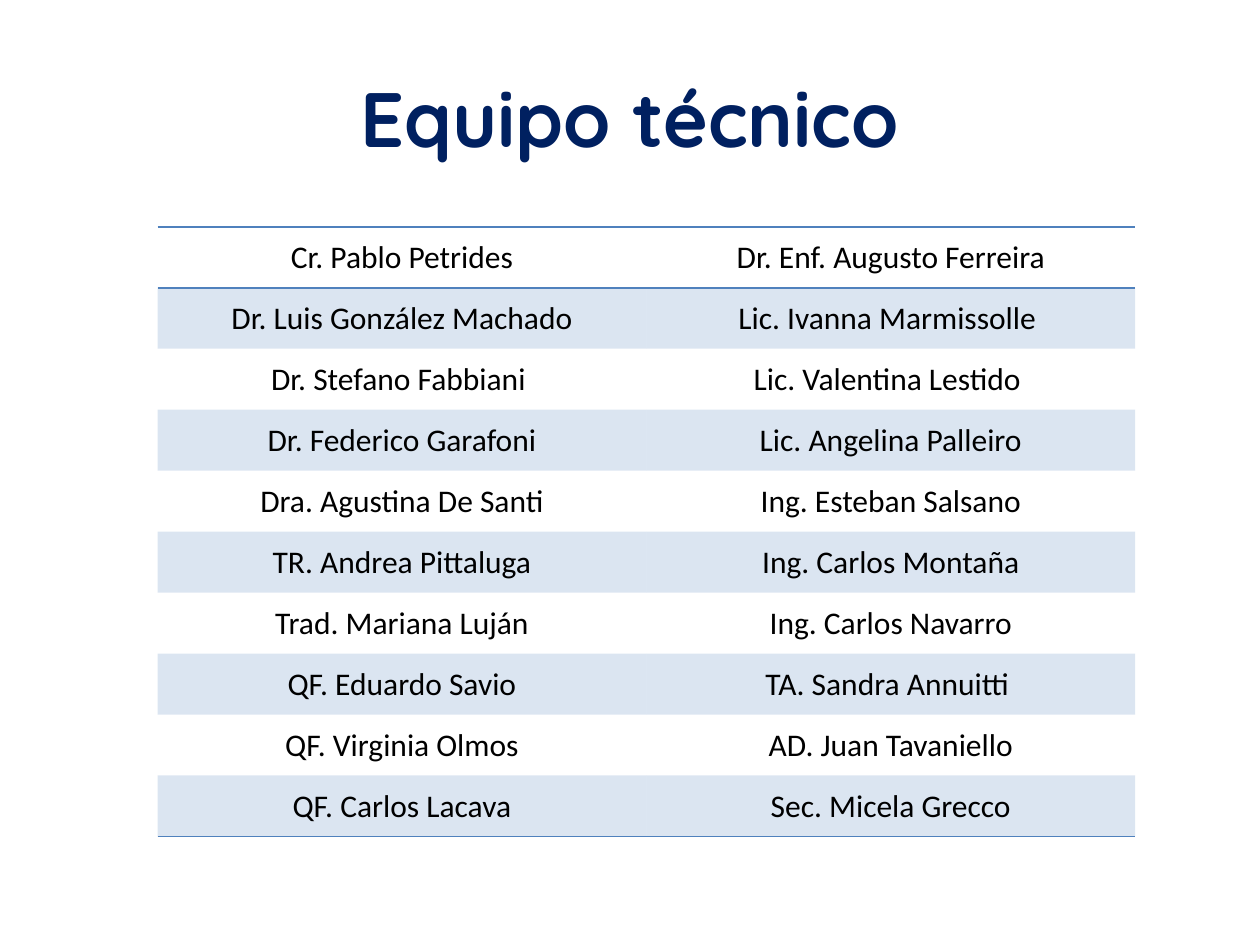
from lxml import etree
from pptx import Presentation
from pptx import util as u
from pptx.dml.color import RGBColor
from pptx.enum import text
from pptx.oxml import ns

TITLE = "Equipo técnico"
TEAM = [
    ("Cr. Pablo Petrides", "Dr. Enf. Augusto Ferreira"),
    ("Dr. Luis González Machado", "Lic. Ivanna Marmissolle "),
    ("Dr. Stefano Fabbiani ", "Lic. Valentina Lestido "),
    ("Dr. Federico Garafoni", "Lic. Angelina Palleiro"),
    ("Dra. Agustina De Santi", "Ing. Esteban Salsano"),
    ("TR. Andrea Pittaluga", "Ing. Carlos Montaña"),
    ("Trad. Mariana Luján", "Ing. Carlos Navarro"),
    ("QF. Eduardo Savio", "TA. Sandra Annuitti "),
    ("QF. Virginia Olmos", "AD. Juan Tavaniello"),
    ("QF. Carlos Lacava", "Sec. Micela Grecco"),
]
NAVY, BLUE, BLACK = "002060", "4F81BD", "000000"
PLAIN_TABLE = "{2D5ABB26-0587-4C30-8999-92F81FD0307C}"
TABLE_LEFT, TABLE_TOP, TABLE_WIDTH, TABLE_HEIGHT = 1.25, 1.8, 7.76, 4.84


def color(value):
    return RGBColor.from_string(value)


def style_text(frame, font, size, hue, bold=False):
    for para in frame.paragraphs:
        para.alignment = text.PP_ALIGN.CENTER
        for span in para.runs:
            span.font.name = font
            span.font.size = u.Pt(size)
            span.font.bold = bold
            span.font.color.rgb = color(hue)


def add_child(parent, tag, **attributes):
    return etree.SubElement(parent, ns.qn(tag), attributes)


def tint(cell, hue, percent):
    cell.fill.solid()
    cell.fill.fore_color.rgb = color(hue)
    swatch = cell._tc.tcPr.find(".//" + ns.qn("a:srgbClr"))
    add_child(swatch, "a:alpha", val=str(percent * 1000))


def add_border(cell, side, hue):
    properties = cell._tc.get_or_add_tcPr()
    line = add_child(properties, "a:ln" + side, w=str(u.Pt(1)))
    add_child(add_child(line, "a:solidFill"), "a:srgbClr", val=hue)
    properties.insert(0, line)


def add_title(page):
    box = page.shapes.add_textbox(u.Inches(0.5), u.Inches(0.3), u.Inches(9), u.Inches(1.25))
    frame = box.text_frame
    frame.word_wrap = True
    frame.vertical_anchor = text.MSO_ANCHOR.MIDDLE
    frame.text = TITLE
    style_text(frame, "Quicksand", 44, NAVY, bold=True)


def add_team(page):
    table = page.shapes.add_table(
        len(TEAM), len(TEAM[0]), u.Inches(TABLE_LEFT), u.Inches(TABLE_TOP),
        u.Inches(TABLE_WIDTH), u.Inches(TABLE_HEIGHT)).table
    table.first_row = table.horz_banding = False
    table._tbl.tblPr.find(ns.qn("a:tableStyleId")).text = PLAIN_TABLE
    for row, names in enumerate(TEAM):
        for column, name in enumerate(names):
            cell = table.cell(row, column)
            cell.text = name
            style_text(cell.text_frame, "Calibri", 18, BLACK)
            cell.vertical_anchor = text.MSO_ANCHOR.MIDDLE
            cell.margin_left = cell.margin_right = cell.margin_top = u.Inches(0.01)
            cell.margin_bottom = 0
            if row % 2:
                tint(cell, BLUE, 20)
            else:
                cell.fill.background()
            if row in (0, len(TEAM) - 1):
                add_border(cell, "B", BLUE)
            if row == 0:
                add_border(cell, "T", BLUE)


def main():
    deck = Presentation()
    deck.slide_width, deck.slide_height = u.Inches(10), u.Inches(7.5)
    page = deck.slides.add_slide(deck.slide_layouts[6])
    add_title(page)
    add_team(page)
    deck.save("out.pptx")


if __name__ == "__main__":
    main()
